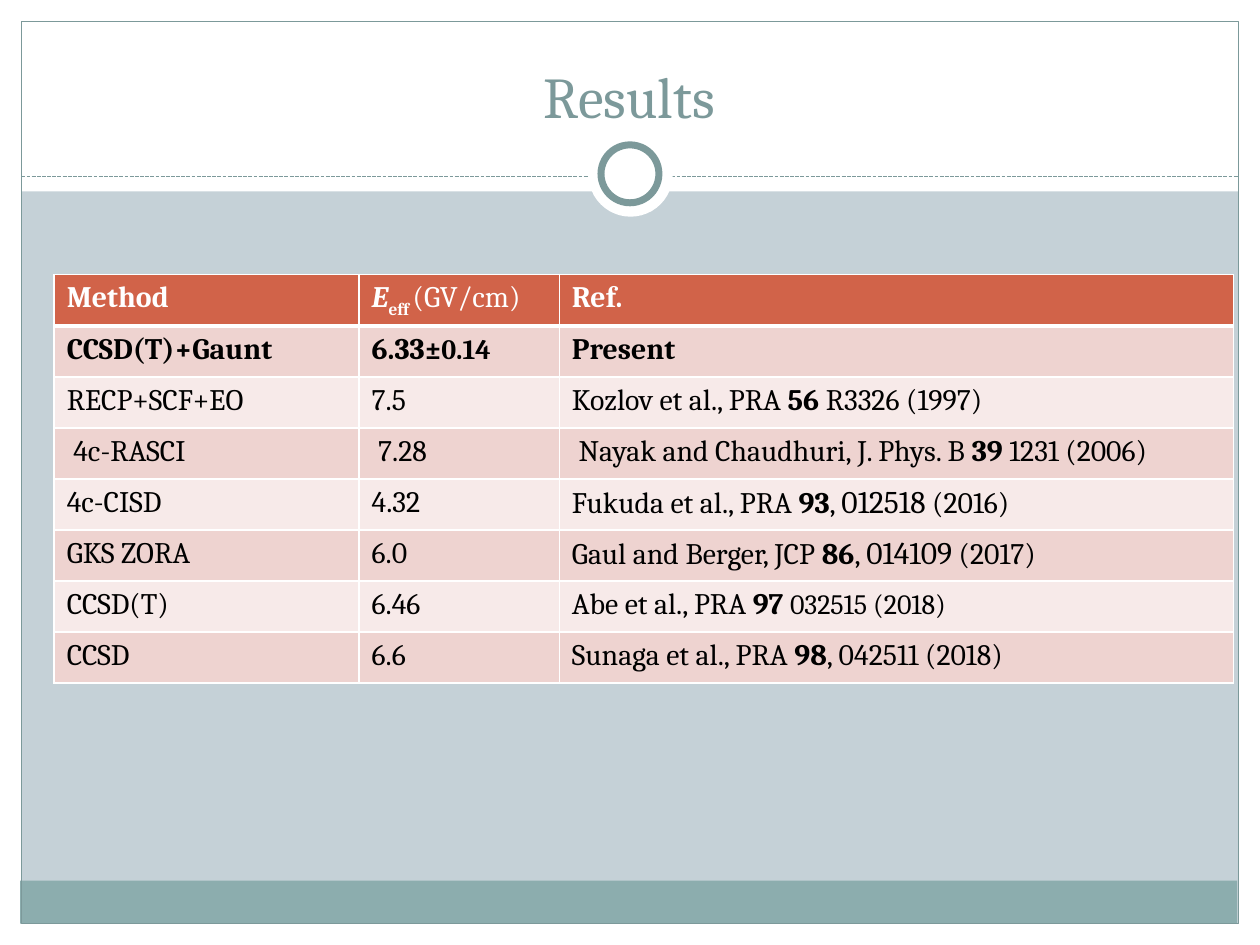
from dataclasses import dataclass

from lxml import etree
from pptx import Presentation
from pptx.dml.color import RGBColor
from pptx.enum.dml import MSO_LINE
from pptx.enum.shapes import MSO_CONNECTOR, MSO_SHAPE
from pptx.enum.text import MSO_ANCHOR, PP_ALIGN
from pptx.oxml.ns import qn
from pptx.util import Inches, Pt

RECTANGLE, OVAL = MSO_SHAPE.RECTANGLE, MSO_SHAPE.OVAL
STRAIGHT = MSO_CONNECTOR.STRAIGHT
DASHED = MSO_LINE.SQUARE_DOT
CENTER, BOTTOM = PP_ALIGN.CENTER, MSO_ANCHOR.BOTTOM
TITLE_ONLY = 5


@dataclass(frozen=True)
class Theme:
    font: str = "Cambria"
    background: str = "C5D1D7"
    white: str = "FFFFFF"
    black: str = "000000"
    accent: str = "7C999A"
    footer: str = "8CADAE"
    header: str = "D16349"
    bands: tuple[str, str] = ("EED3D0", "F7EAE9")
    title_size: float = 33
    text_size: float = 17
    small_size: float = 16
    large_size: float = 18


THEME = Theme()


@dataclass(frozen=True)
class Panel:
    left: float
    top: float
    width: float
    height: float
    fill: str | None = THEME.white
    line: str | None = None
    line_width: float = 0.75
    kind: int = RECTANGLE


@dataclass(frozen=True)
class Span:
    """A stretch of text; None keeps the setting of its paragraph."""
    text: str
    bold: bool | None = None
    italic: bool | None = None
    size: float | None = None
    subscript: bool = False


@dataclass(frozen=True)
class Result:
    method: str
    field: list[Span]
    reference: list[Span]
    bold: bool = False


def citation(source: str, volume: str, *rest: Span) -> list[Span]:
    return [Span(source), Span(volume, bold=True), *rest]


FRAME = [
    Panel(0, 7.33, 10, 0.17),
    Panel(0, 0, 10, 1.52),
    Panel(0, 0, 0.17, 7.5),
    Panel(9.83, 0, 0.17, 7.5),
    Panel(0.16, 6.99, 9.66, 0.34, THEME.footer),
    Panel(0.17, 0.17, 9.66, 7.16, None, THEME.accent),
]
RING = [
    Panel(4.67, 1.05, 0.67, 0.67, kind=OVAL),
    Panel(4.77, 1.15, 0.46, 0.46, line=THEME.accent, line_width=4, kind=OVAL),
]
RESULTS = [
    Result("Method", [Span("E", italic=True), Span("eff ", subscript=True),
                      Span("(GV/cm)", bold=False)], [Span("Ref.")], bold=True),
    Result("CCSD(T)+Gaunt", [Span("6.33"), Span("±0.14", size=THEME.small_size)],
           [Span("Present")], bold=True),
    Result("RECP+SCF+EO", [Span("7.5")],
           citation("Kozlov et al., PRA ", "56", Span(" R3326 (1997)"))),
    Result(" 4c-RASCI", [Span(" 7.28")],
           citation(" Nayak and Chaudhuri, J. Phys. B ", "39", Span(" 1231 (2006)"))),
    Result("4c-CISD", [Span("4.32")],
           citation("Fukuda et al., PRA ", "93", Span(", "),
                    Span("012518", size=THEME.large_size), Span(" (2016)"))),
    Result("GKS ZORA", [Span("6.0")],
           citation("Gaul and Berger, JCP ", "86", Span(", "),
                    Span("014109", size=THEME.large_size), Span(" (2017)"))),
    Result("CCSD(T)", [Span("6.46")],
           citation("Abe et al., PRA ", "97 ",
                    Span("032515 (2018)", size=THEME.small_size))),
    Result("CCSD", [Span("6.6")],
           citation("Sunaga et al., PRA ", "98", Span(", 042511 (2018)"))),
]
COLUMN_WIDTHS = (2.42, 1.59, 5.35)
TABLE_LEFT, TABLE_TOP, TABLE_HEIGHT = 0.43, 2.18, 3.24


def color(value: str) -> RGBColor:
    return RGBColor.from_string(value)


def paint(fill, value: str) -> None:
    fill.solid()
    fill.fore_color.rgb = color(value)


def add_panel(page, panel: Panel) -> None:
    box = page.shapes.add_shape(panel.kind, Inches(panel.left), Inches(panel.top),
                                Inches(panel.width), Inches(panel.height))
    box.shadow.inherit = False
    if panel.fill:
        paint(box.fill, panel.fill)
    else:
        box.fill.background()
    if panel.line:
        paint(box.line.fill, panel.line)
        box.line.width = Pt(panel.line_width)
    else:
        box.line.fill.background()


def add_divider(page) -> None:
    divider = page.shapes.add_connector(STRAIGHT, Inches(0.17), Inches(1.4),
                                        Inches(9.83), Inches(1.4))
    paint(divider.line.fill, THEME.accent)
    divider.line.width = Pt(0.75)
    divider.line.dash_style = DASHED
    etree.SubElement(divider._element.spPr, qn("a:effectLst"))


def style_paragraph(para, size: float, value: str, bold: bool) -> None:
    para.font.name = THEME.font
    para.font.size = Pt(size)
    para.font.bold = bold
    para.font.color.rgb = color(value)


def place_title(page, text: str) -> None:
    """Fill the title and bring it in front of the white band."""
    title = page.shapes.title
    title.left, title.top = Inches(0.33), Inches(0.25)
    title.width, title.height = Inches(9.33), Inches(0.83)
    title.text_frame.text = text
    title.text_frame.vertical_anchor = BOTTOM
    para = title.text_frame.paragraphs[0]
    para.alignment = CENTER
    style_paragraph(para, THEME.title_size, THEME.accent, False)
    page.shapes._spTree.append(title._element)


def set_borders(cell, top: float, bottom: float) -> None:
    properties = cell._tc.get_or_add_tcPr()
    for side, width in (("L", 1), ("R", 1), ("T", top), ("B", bottom)):
        line = etree.SubElement(properties, qn(f"a:ln{side}"), w=str(Pt(width)))
        fill = etree.SubElement(line, qn("a:solidFill"))
        etree.SubElement(fill, qn("a:srgbClr"), val=THEME.white)


def add_span(para, span: Span) -> None:
    run = para.add_run()
    run.text = span.text
    run.font.bold = span.bold
    run.font.italic = span.italic
    if span.size:
        run.font.size = Pt(span.size)
    if span.subscript:
        run._r.get_or_add_rPr().set("baseline", "-25000")


def add_results_table(page, results: list[Result]) -> None:
    table = page.shapes.add_table(
        len(results), len(COLUMN_WIDTHS), Inches(TABLE_LEFT), Inches(TABLE_TOP),
        Inches(sum(COLUMN_WIDTHS)), Inches(TABLE_HEIGHT)).table
    table.first_row = table.horz_banding = False
    for column, width in zip(table.columns, COLUMN_WIDTHS):
        column.width = Inches(width)
    for index, (row, result) in enumerate(zip(table.rows, results)):
        is_header = index == 0
        fill = THEME.header if is_header else THEME.bands[(index - 1) % 2]
        text_color = THEME.white if is_header else THEME.black
        contents = ([Span(result.method)], result.field, result.reference)
        for cell, spans in zip(row.cells, contents):
            set_borders(cell, 3 if index == 1 else 1, 3 if is_header else 1)
            paint(cell.fill, fill)
            para = cell.text_frame.paragraphs[0]
            style_paragraph(para, THEME.text_size, text_color, result.bold)
            for span in spans:
                add_span(para, span)


def main() -> None:
    deck = Presentation()
    deck.slide_width, deck.slide_height = Inches(10), Inches(7.5)
    page = deck.slides.add_slide(deck.slide_layouts[TITLE_ONLY])
    paint(page.background.fill, THEME.background)
    for panel in FRAME:
        add_panel(page, panel)
    add_divider(page)
    for panel in RING:
        add_panel(page, panel)
    place_title(page, "Results")
    add_results_table(page, RESULTS)
    deck.save("out.pptx")


if __name__ == "__main__":
    main()
